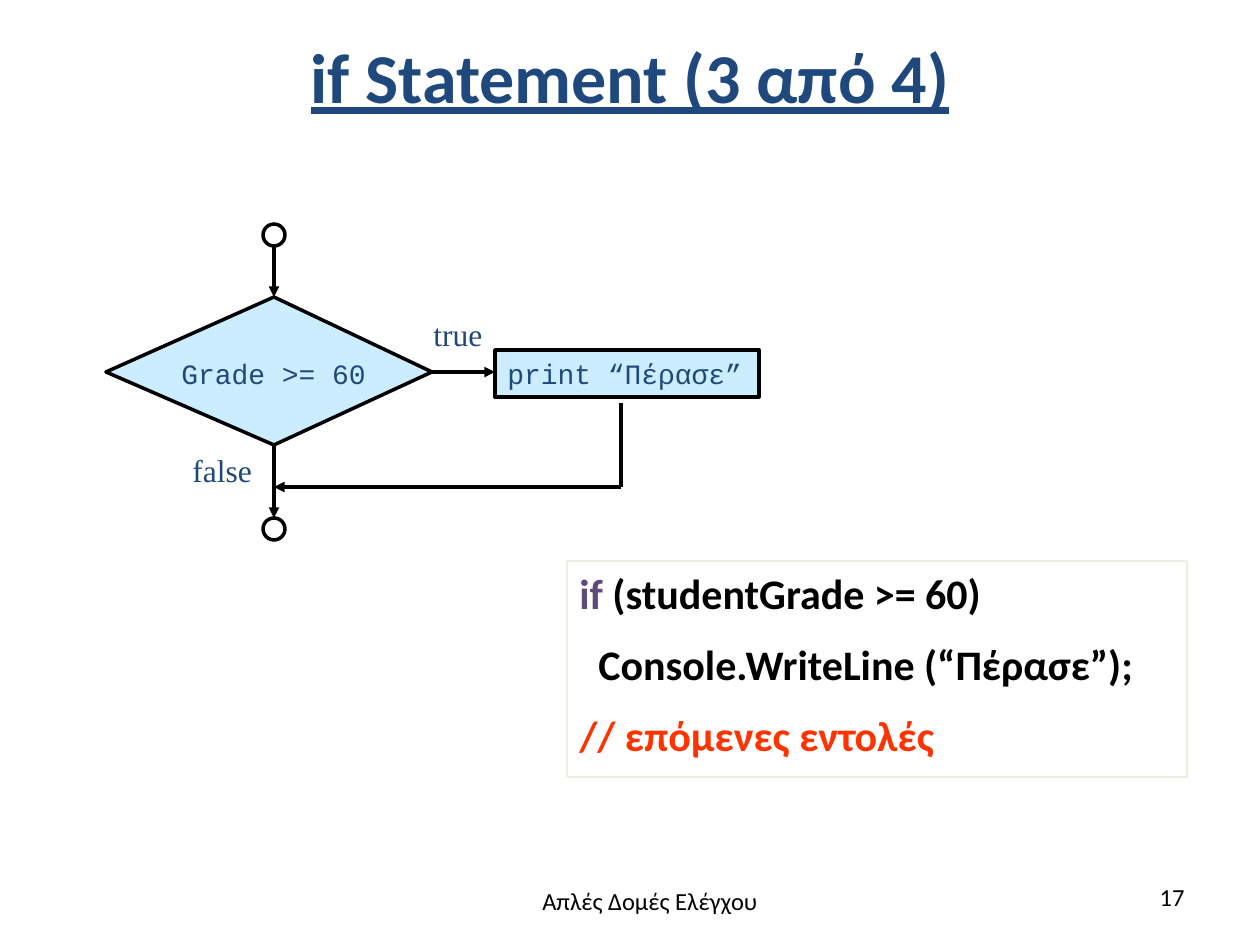
import pptx
import pptx.util
import pptx.dml.color
import pptx.enum.shapes
import pptx.enum.text
import pptx.oxml.ns
import lxml.etree

RGB = pptx.dml.color.RGBColor
SHAPES = pptx.enum.shapes.MSO_SHAPE
ALIGN = pptx.enum.text.PP_ALIGN
ANCHOR = pptx.enum.text.MSO_ANCHOR

NAVY = RGB(0x1F, 0x49, 0x7D)
BLACK = RGB(0, 0, 0)
WHITE = RGB(0xFF, 0xFF, 0xFF)
PALE_BLUE = RGB(0xCC, 0xEC, 0xFF)
PURPLE = RGB(0x60, 0x4A, 0x7B)
RED = RGB(0xFF, 0x33, 0x00)
CREAM = RGB(0xEE, 0xEC, 0xE1)

EMU_PER_PX = 914400 / 126


def px(length):
    return pptx.util.Emu(round(length * EMU_PER_PX))


def write(frame, lines, size=16, font="Calibri", color=BLACK, bold=False,
          underline=False, align=ALIGN.LEFT, anchor=ANCHOR.TOP, wrap=True,
          gap=0):
    """Fill a text frame; each line is a string or a list of (text, color)."""
    frame.word_wrap = wrap
    frame.vertical_anchor = anchor
    frame.auto_size = pptx.enum.text.MSO_AUTO_SIZE.NONE
    for index, line in enumerate(lines):
        paragraph = frame.add_paragraph() if index else frame.paragraphs[0]
        paragraph.alignment = align
        if index:
            paragraph.space_before = pptx.util.Pt(gap)
        runs = [(line, color)] if isinstance(line, str) else line
        for text, run_color in runs:
            run = paragraph.add_run()
            run.text = text
            run.font.name = font
            run.font.size = pptx.util.Pt(size)
            run.font.bold = bold
            run.font.underline = underline
            run.font.color.rgb = run_color


class FlowSlide:
    """Holds the flowchart style and the current slide."""
    stroke = 2

    def __init__(self, deck):
        self.slide = deck.slides.add_slide(deck.slide_layouts[5])
        self.shapes = self.slide.shapes

    def title(self, text, x, y, w, h):
        heading = self.shapes.title
        heading.left, heading.top, heading.width, heading.height = map(px, (x, y, w, h))
        write(heading.text_frame, [text], size=40, color=NAVY, bold=True,
              underline=True, align=ALIGN.CENTER, anchor=ANCHOR.MIDDLE)

    def paint(self, shape, fill, line, width):
        shape.shadow.inherit = False
        if fill is None:
            shape.fill.background()
        else:
            shape.fill.solid()
            shape.fill.fore_color.rgb = fill
        shape.line.color.rgb = line
        shape.line.width = pptx.util.Pt(width)
        return shape

    def block(self, kind, x, y, w, h, fill=None, line=BLACK, width=stroke):
        shape = self.shapes.add_shape(kind, px(x), px(y), px(w), px(h))
        return self.paint(shape, fill, line, width)

    def polygon(self, corners, fill):
        builder = self.shapes.build_freeform(*corners[0], scale=EMU_PER_PX)
        builder.add_line_segments(corners[1:], close=True)
        return self.paint(builder.convert_to_shape(), fill, BLACK, self.stroke)

    def label(self, text, x, y, w, h, **style):
        box = self.shapes.add_textbox(px(x), px(y), px(w), px(h))
        write(box.text_frame, [text], **style)

    def line(self, start, end, arrow=True):
        connector = self.shapes.add_connector(
            pptx.enum.shapes.MSO_CONNECTOR.STRAIGHT, *map(px, start + end))
        connector.line.color.rgb = BLACK
        connector.line.width = pptx.util.Pt(self.stroke)
        if arrow:
            lxml.etree.SubElement(connector.line._get_or_add_ln(),
                                  pptx.oxml.ns.qn("a:tailEnd"), type="triangle")
        lxml.etree.SubElement(connector._element.spPr,
                              pptx.oxml.ns.qn("a:effectLst"))


def main():
    deck = pptx.Presentation()
    deck.slide_width, deck.slide_height = px(1260), px(945)
    flow = FlowSlide(deck)
    flow.title("if Statement (3 από 4)", 63, -14, 1134, 179)

    # Flowchart nodes
    axis, middle = 274, 372
    top, bottom, left, right = 297, 445, 106, 432
    code = dict(font="Courier New", color=NAVY, wrap=False)
    action = flow.block(SHAPES.RECTANGLE, 495, 350, 264, 47, fill=PALE_BLUE)
    write(action.text_frame, ["print “Πέρασε”"], **code)
    flow.polygon([(axis, top), (left, middle), (axis, bottom), (right, middle)],
                 PALE_BLUE)
    flow.label("Grade >= 60", 169, 350, 210, 47, **code)
    node = 22
    for node_top in (224, 518):
        flow.block(SHAPES.OVAL, axis - node // 2, node_top, node, node, fill=WHITE)

    # Flow lines
    join, turn = 487, 621
    flow.line((axis, 246), (axis, top))
    flow.line((axis, bottom), (axis, 518))
    flow.line((right, middle), (495, middle))
    flow.line((turn, join), (axis, join))
    flow.line((turn, join), (turn, 403), arrow=False)

    # Branch labels
    branch = dict(size=18, font="Times New Roman", color=NAVY, wrap=False)
    flow.label("true", 421, 309, 74, 50, **branch)
    flow.label("false", 180, 445, 84, 50, **branch)

    # Code panel
    panel = flow.block(SHAPES.RECTANGLE, 567, 561, 620, 216, line=CREAM, width=0.75)
    write(panel.text_frame,
          [[("if ", PURPLE), ("(studentGrade >= 60)", BLACK)],
           "  Console.WriteLine (“Πέρασε”);",
           [("// επόμενες εντολές", RED)]],
          size=24, bold=True, gap=12)

    # Footer
    flow.label("Απλές Δομές Ελέγχου", 430, 880, 440, 69, size=14, align=ALIGN.CENTER)
    flow.label("17", 903, 876, 294, 50, size=14, align=ALIGN.RIGHT)

    deck.save("out.pptx")


if __name__ == "__main__":
    main()
